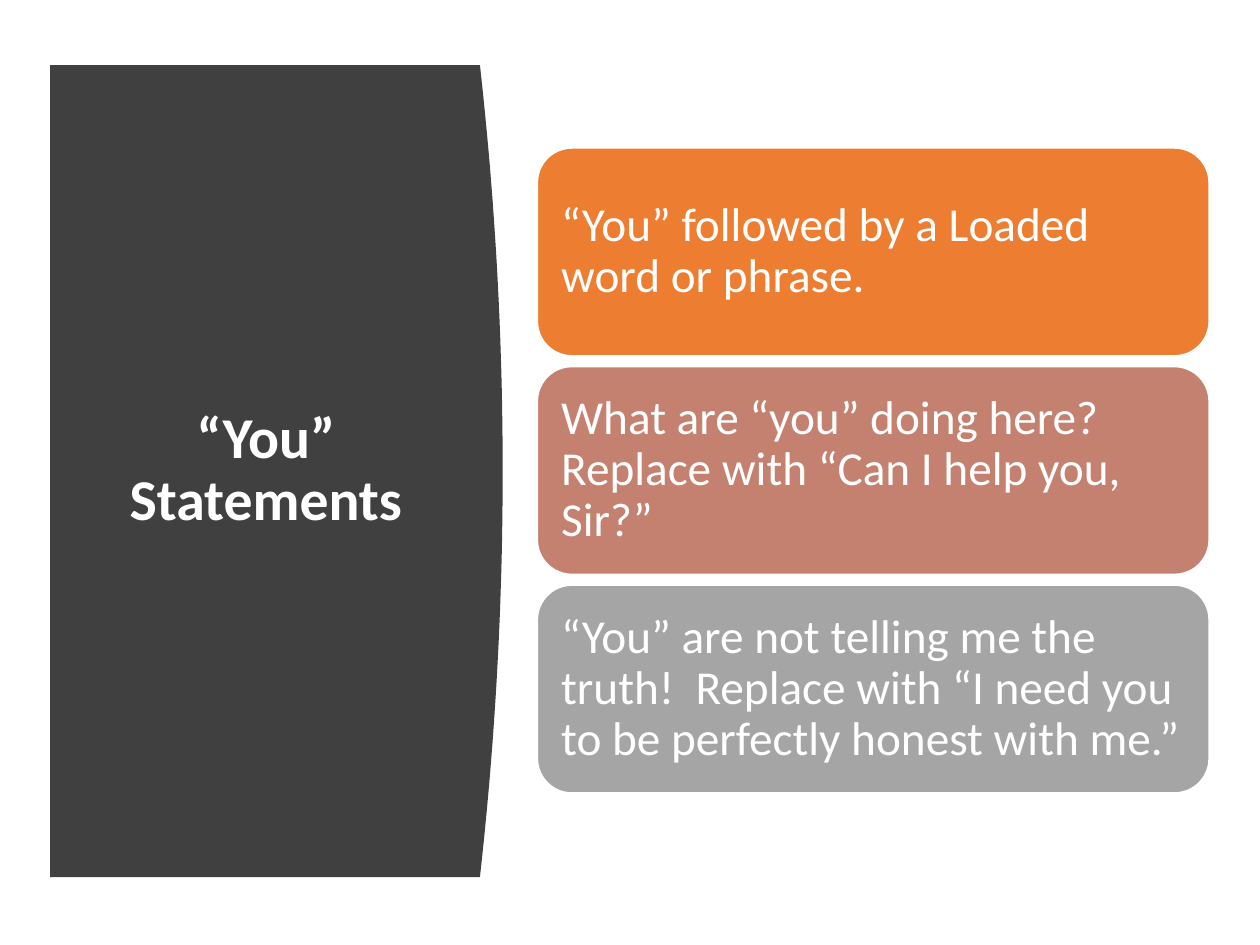
from dataclasses import dataclass

from pptx import Presentation
from pptx.dml.color import RGBColor
from pptx.enum.shapes import MSO_SHAPE
from pptx.enum.text import MSO_ANCHOR, PP_ALIGN
from pptx.util import Pt

ROUNDED = MSO_SHAPE.ROUNDED_RECTANGLE
MIDDLE = MSO_ANCHOR.MIDDLE
LEFT, CENTER = PP_ALIGN.LEFT, PP_ALIGN.CENTER


@dataclass(frozen=True)
class Theme:
    font: str = "Calibri"
    title_size: float = 33
    card_size: float = 27
    text: str = "FFFFFF"
    outline: str = "FFFFFF"
    panel: str = "404040"
    cards: tuple = ("ED7D31", "C48170", "A5A5A5")


THEME = Theme()

TITLE = "“You” Statements"
STATEMENTS = (
    "“You” followed by a Loaded word or phrase.",
    "What are “you” doing here?  Replace with “Can I help you, Sir?”",
    "“You” are not telling me the truth!  Replace with “I need you "
    "to be perfectly honest with me.”",
)


def set_text(sp, text, *, size, bold=False, align=LEFT, margins=(7.2, 3.6)):
    tf = sp.text_frame
    tf.word_wrap = True
    tf.vertical_anchor = MIDDLE
    tf.margin_left = tf.margin_right = Pt(margins[0])
    tf.margin_top = tf.margin_bottom = Pt(margins[1])
    p = tf.paragraphs[0]
    p.alignment = align
    p.line_spacing = 0.9
    r = p.add_run()
    r.text = text
    r.font.name = THEME.font
    r.font.size = Pt(size)
    r.font.bold = bold
    r.font.color.rgb = RGBColor.from_string(THEME.text)


def set_fill(sp, color):
    sp.shadow.inherit = False
    sp.fill.solid()
    sp.fill.fore_color.rgb = RGBColor.from_string(color)


def add_title_panel(slide, left, top, width, height, bulge=13, steps=48):
    """Dark panel whose right side bows outward as a parabola."""
    edge = []
    for i in range(steps + 1):
        t = i / steps
        x = left + width - bulge * (2 * t - 1) ** 2
        edge.append((Pt(x), Pt(top + height * t)))
    builder = slide.shapes.build_freeform(Pt(left), Pt(top))
    builder.add_line_segments(edge + [(Pt(left), Pt(top + height))], close=True)
    panel = builder.convert_to_shape()
    set_fill(panel, THEME.panel)
    panel.line.fill.background()

    inset_x, inset_y = 22.5, 42.5
    title = slide.shapes.add_textbox(
        Pt(left + inset_x), Pt(top + inset_y),
        Pt(width - 2 * inset_x - 12), Pt(height - 2 * inset_y))
    set_text(title, TITLE, size=THEME.title_size, bold=True, align=CENTER)


def add_cards(slide, left, top, width, height, gap=6):
    card_height = (height - gap * (len(STATEMENTS) - 1)) / len(STATEMENTS)
    for i, (text, color) in enumerate(zip(STATEMENTS, THEME.cards)):
        y = top + i * (card_height + gap)
        card = slide.shapes.add_shape(
            ROUNDED, Pt(left), Pt(y), Pt(width), Pt(card_height))
        set_fill(card, color)
        card.line.color.rgb = RGBColor.from_string(THEME.outline)
        card.line.width = Pt(1)
        set_text(card, text, size=THEME.card_size, margins=(7.9, 7.9))


def main():
    prs = Presentation()
    prs.slide_width, prs.slide_height = Pt(720), Pt(540)
    slide = prs.slides.add_slide(prs.slide_layouts[6])
    add_title_panel(slide, 28.6, 37.2, 258.7, 464)
    add_cards(slide, 307, 84.5, 384, 368.7)
    prs.save("out.pptx")


if __name__ == "__main__":
    main()
